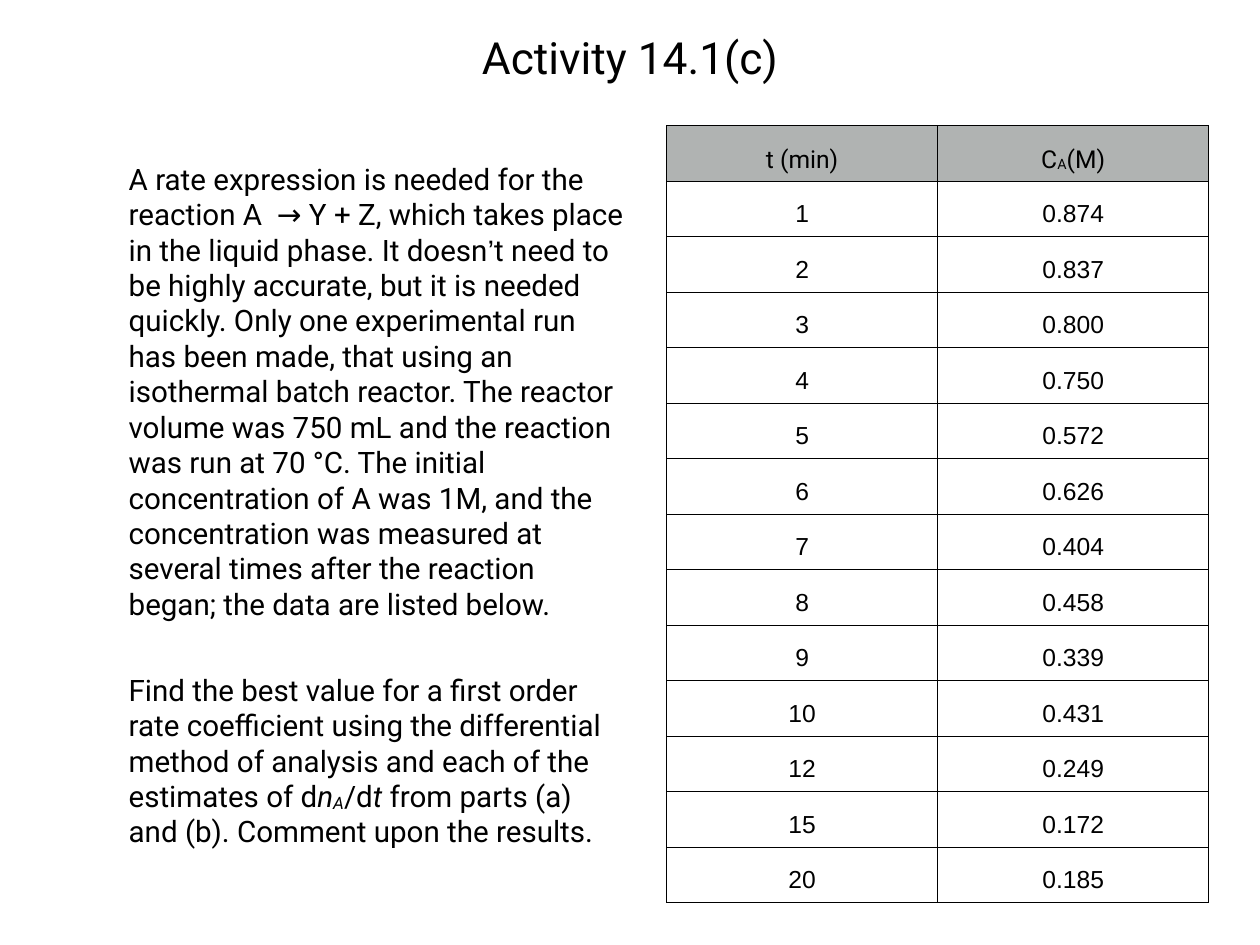
import pptx
import pptx.dml.color
import pptx.enum.text
import pptx.oxml
import pptx.oxml.ns
import pptx.util

Cm = pptx.util.Cm
Pt = pptx.util.Pt
INK = "000000"


def add_span(para, text, size, font="Roboto", italic=False, subscript=False):
    span = para.add_run()
    span.text = text
    span.font.size = Pt(size)
    span.font.name = font
    span.font.italic = italic
    span.font.color.rgb = pptx.dml.color.RGBColor.from_string(INK)
    if subscript:
        span.font._element.set("baseline", "-6000")


def set_margins(frame):
    """Give a text frame or a table cell the same margin on all sides."""
    frame.margin_left = frame.margin_right = Cm(0.16)
    frame.margin_top = frame.margin_bottom = Cm(0.16)


deck = pptx.Presentation()
deck.slide_width, deck.slide_height = Cm(36.12), Cm(27.1)
page = deck.slides.add_slide(deck.slide_layouts[6])

# Title and problem text
frames = []
for top, width, height in [(0.71, 29.06, 3.53), (4.45, 14.53, 20.29)]:
    box = page.shapes.add_textbox(Cm(3.53), Cm(top), Cm(width), Cm(height))
    box.text_frame.word_wrap = True
    set_margins(box.text_frame)
    frames.append(box.text_frame)
title, body = frames

title.paragraphs[0].alignment = pptx.enum.text.PP_ALIGN.CENTER
add_span(title.paragraphs[0], "Activity 14.1(c)", 36)

problem = body.paragraphs[0]
add_span(problem, "A rate expression is needed for the reaction A  → Y + Z, which takes "
         "place in the liquid phase. It doesn", 24)
add_span(problem, "’", 24, font="Arial")
add_span(problem, "t need to be highly accurate, but it is needed quickly. Only one "
         "experimental run has been made, that using an isothermal batch reactor. "
         "The reactor volume was 750 mL and the reaction was run at 70 °C. The initial "
         "concentration of A was 1M, and the concentration was measured at several "
         "times after the reaction began; the data are listed below.", 24)

task = body.add_paragraph()
task.space_before = Pt(41)
add_span(task, "Find the best value for a first order rate coefficient using the "
         "differential method of analysis and each of the estimates of d", 24)
add_span(task, "n", 24, italic=True)
add_span(task, "A", 24, italic=True, subscript=True)
add_span(task, "/d", 24)
add_span(task, "t", 24, italic=True)
add_span(task, " from parts (a) and (b). Comment upon the results.", 24)

# Measured concentrations
times = [1, 2, 3, 4, 5, 6, 7, 8, 9, 10, 12, 15, 20]
concentrations = [0.874, 0.837, 0.8, 0.75, 0.572, 0.626, 0.404,
                  0.458, 0.339, 0.431, 0.249, 0.172, 0.185]
rows = [(["t (min)"], ["C", "A", "(M)"])]
rows += [([f"{time}"], [f"{value:.3f}"]) for time, value in zip(times, concentrations)]

header_height, row_height, column_width = 1.6, 1.53, 7.77
table = page.shapes.add_table(
    len(rows), 2, Cm(19.11), Cm(3.6), Cm(2 * column_width),
    Cm(header_height + len(times) * row_height)).table
for column in table.columns:
    column.width = Cm(column_width)

for row_index, row in enumerate(rows):
    is_header = row_index == 0
    table.rows[row_index].height = Cm(header_height if is_header else row_height)
    for column_index, texts in enumerate(row):
        cell = table.cell(row_index, column_index)
        set_margins(cell)
        para = cell.text_frame.paragraphs[0]
        para.alignment = pptx.enum.text.PP_ALIGN.CENTER
        para.line_spacing = 1.5
        for text in texts:
            add_span(para, text, 20, font="Roboto" if is_header else "Arial",
                     subscript=text == "A")
        properties = cell._tc.get_or_add_tcPr()
        for side in ("lnL", "lnR", "lnT", "lnB"):
            properties.append(pptx.oxml.parse_xml(
                f'<a:{side} {pptx.oxml.ns.nsdecls("a")} w="{Pt(1)}">'
                f'<a:solidFill><a:srgbClr val="{INK}"/></a:solidFill></a:{side}>'))
        cell.fill.solid()
        cell.fill.fore_color.rgb = pptx.dml.color.RGBColor.from_string(
            "B0B3B2" if is_header else "FFFFFF")

deck.save("out.pptx")
